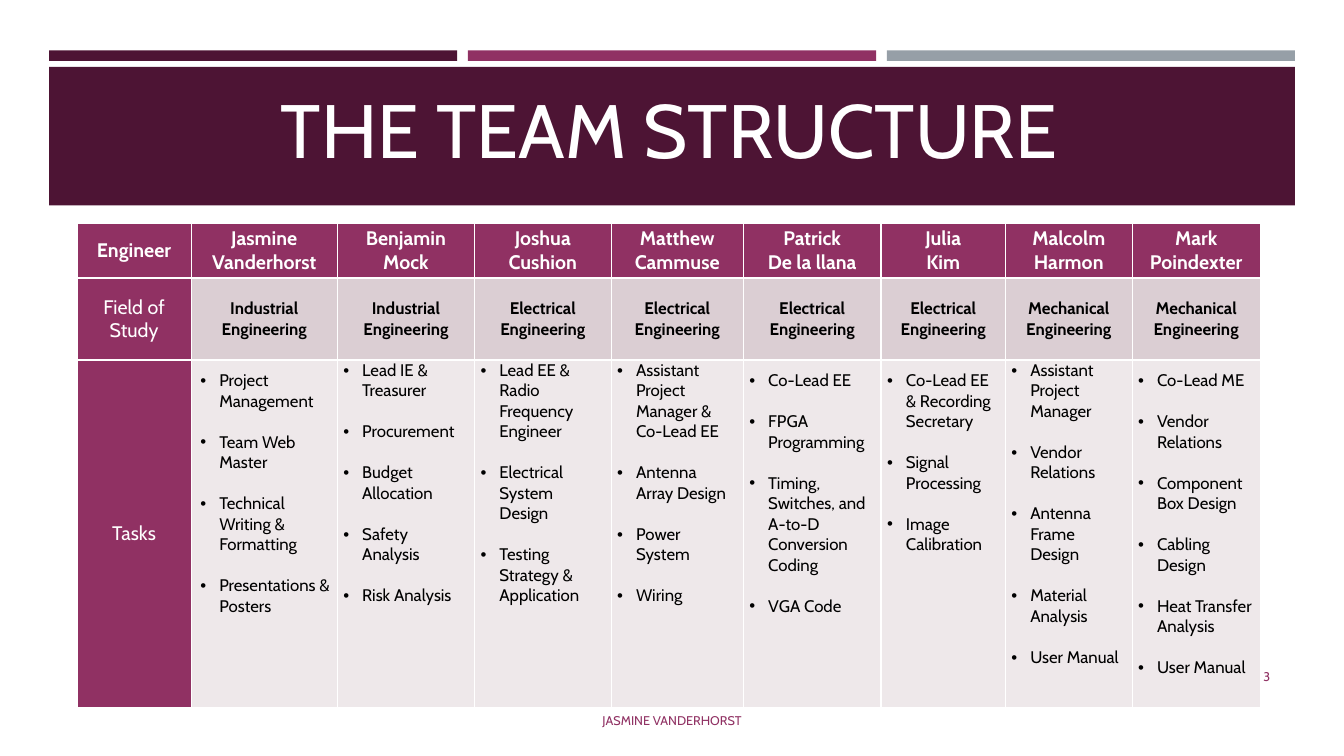
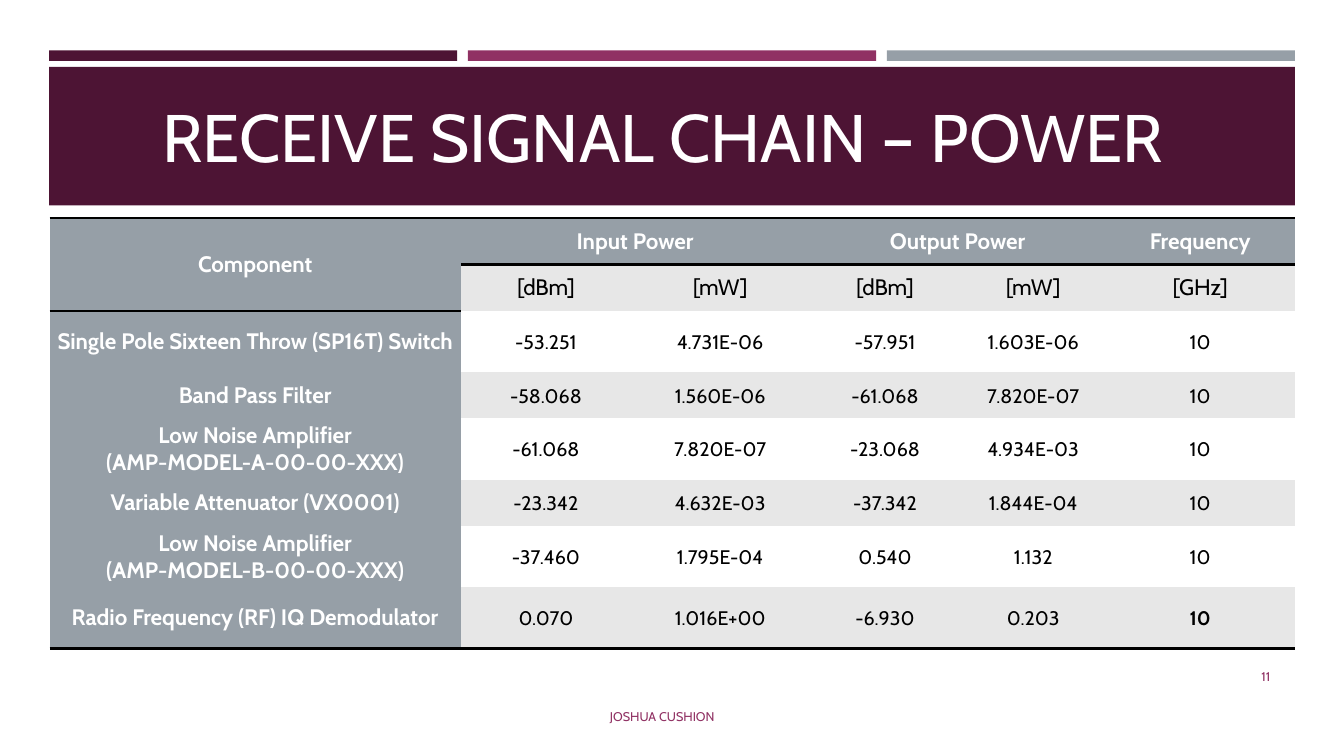
import pptx
import pptx.util
import pptx.dml.color
import pptx.enum.shapes
import pptx.enum.text
import pptx.oxml
import pptx.oxml.ns

Pt = pptx.util.Pt
ALIGN = pptx.enum.text.PP_ALIGN
ANCHOR = pptx.enum.text.MSO_ANCHOR
NO_GRID = "{2D5ABB26-0587-4C30-8999-92F81FD0307C}"


def assign(target, values):
    for name, value in values.items():
        setattr(target, name, value)


class Deck:
    FONT = "Cabin"
    COLORS = {
        "plum": "4D1434", "berry": "903163", "slate": "969FA7",
        "rose": "DBCED3", "blush": "EEE8EA", "mist": "E7E7E7",
        "white": "FFFFFF", "black": "000000",
    }
    LEFT, WIDTH = 35, 890
    BAND_WIDTH = 291.6

    def __init__(self):
        self.prs = pptx.Presentation()
        assign(self.prs, {"slide_width": Pt(960), "slide_height": Pt(540)})
        self.slide = None

    def color(self, name):
        return pptx.dml.color.RGBColor.from_string(self.COLORS[name])

    def paint(self, fill, name):
        fill.solid()
        fill.fore_color.rgb = self.color(name)

    def style(self, paragraph, size, color, bold=False, **layout):
        assign(paragraph, layout)
        assign(paragraph.font, {"name": self.FONT, "size": Pt(size), "bold": bold})
        paragraph.font.color.rgb = self.color(color)

    def bar(self, left, top, width, height, color):
        bar = self.slide.shapes.add_shape(
            pptx.enum.shapes.MSO_SHAPE.RECTANGLE, Pt(left), Pt(top), Pt(width), Pt(height))
        bar.shadow.inherit = False
        self.paint(bar.fill, color)
        bar.line.fill.background()

    def new_slide(self, title, size, box):
        self.slide = self.prs.slides.add_slide(self.prs.slide_layouts[5])
        pitch = (self.WIDTH - self.BAND_WIDTH) / 2
        for i, color in enumerate(("plum", "berry", "slate")):
            self.bar(self.LEFT + i * pitch, 36, self.BAND_WIDTH, 7.5, color)
        self.bar(self.LEFT, 47.8, self.WIDTH, 99, "plum")
        heading = self.slide.shapes.title
        heading.element.getparent().append(heading.element)
        assign(heading, dict(zip(("left", "top", "width", "height"), map(Pt, box))))
        frame = heading.text_frame
        frame.text = title
        assign(frame, {"vertical_anchor": ANCHOR.BOTTOM, "word_wrap": True,
                       "auto_size": pptx.enum.text.MSO_AUTO_SIZE.NONE})
        self.style(frame.paragraphs[0], size, "white", alignment=ALIGN.CENTER)

    def label(self, text, left, top, width, align):
        frame = self.slide.shapes.add_textbox(Pt(left), Pt(top), Pt(width), Pt(28.8)).text_frame
        frame.text = text
        assign(frame, {"word_wrap": True, "vertical_anchor": ANCHOR.MIDDLE})
        self.style(frame.paragraphs[0], 9, "berry", alignment=align)

    def footer(self, speaker, left, top, width, number):
        self.label(speaker, left, top, width, ALIGN.CENTER)
        self.label(number, 831.6, 468.7, 82.8, ALIGN.RIGHT)

    def table(self, left, top, widths, heights):
        frame = self.slide.shapes.add_table(
            len(heights), len(widths), Pt(left), Pt(top), Pt(sum(widths)), Pt(sum(heights)))
        table = frame.table
        assign(table, {"first_row": False, "horz_banding": False})
        table._tbl.tblPr.find(pptx.oxml.ns.qn("a:tableStyleId")).text = NO_GRID
        for column, width in zip(table.columns, widths):
            column.width = Pt(width)
        for row, height in zip(table.rows, heights):
            row.height = Pt(height)
        return table

    def edges(self, cell, color, weights):
        properties = cell._tc.get_or_add_tcPr()
        for side in "LRTB":
            if side in weights:
                properties.append(pptx.oxml.parse_xml(
                    f'<a:ln{side} {pptx.oxml.ns.nsdecls("a")} w="{Pt(weights[side])}">'
                    f'<a:solidFill><a:srgbClr val="{self.COLORS[color]}"/></a:solidFill>'
                    f'</a:ln{side}>'))

    def cell(self, cell, text, fill, size, color, inset, bold=False, **layout):
        cell.text = text
        self.paint(cell.fill, fill)
        assign(cell, {"vertical_anchor": ANCHOR.MIDDLE, "margin_left": Pt(inset),
                      "margin_right": Pt(inset), "margin_top": 0, "margin_bottom": 0})
        for paragraph in cell.text_frame.paragraphs:
            self.style(paragraph, size, color, bold, **{"alignment": ALIGN.CENTER, **layout})

    def bullets(self, cell, items, fill, inset, indent, top):
        self.cell(cell, "\n".join(items), fill, 12, "black", inset,
                  alignment=ALIGN.LEFT, space_after=Pt(14.64))
        assign(cell, {"vertical_anchor": ANCHOR.TOP, "margin_top": Pt(top)})
        for paragraph in cell.text_frame.paragraphs:
            properties = paragraph._p.get_or_add_pPr()
            properties.set("marL", str(Pt(indent)))
            properties.set("indent", str(-Pt(13.5)))
            for bullet in ('buFont {} typeface="Arial"', 'buChar {} char="•"'):
                properties.append(pptx.oxml.parse_xml(
                    "<a:" + bullet.format(pptx.oxml.ns.nsdecls("a")) + "/>"))


TEAM = [
    ("Jasmine Vanderhorst", "Industrial", 7.3,
     ["Project Management", "Team Web Master", "Technical Writing & Formatting",
      "Presentations & Posters"]),
    ("Benjamin Mock", "Industrial", 0,
     ["Lead IE & Treasurer", "Procurement", "Budget Allocation", "Safety Analysis",
      "Risk Analysis"]),
    ("Joshua Cushion", "Electrical", 0,
     ["Lead EE & Radio Frequency Engineer", "Electrical System Design",
      "Testing Strategy & Application"]),
    ("Matthew Cammuse", "Electrical", 0,
     ["Assistant Project Manager & Co-Lead EE", "Antenna Array Design", "Power System",
      "Wiring"]),
    ("Patrick\nDe la llana", "Electrical", 7.3,
     ["Co-Lead EE", "FPGA Programming", "Timing, Switches, and A-to-D Conversion Coding",
      "VGA Code"]),
    ("Julia\nKim", "Electrical", 7.3,
     ["Co-Lead EE & Recording Secretary", "Signal Processing", "Image Calibration"]),
    ("Malcolm Harmon", "Mechanical", 0,
     ["Assistant Project Manager", "Vendor Relations", "Antenna Frame Design",
      "Material Analysis", "User Manual"]),
    ("Mark Poindexter", "Mechanical", 7.3,
     ["Co-Lead ME", "Vendor Relations", "Component Box Design", "Cabling Design",
      "Heat Transfer Analysis", "User Manual"]),
]

CHAIN = [
    ("Single Pole Sixteen Throw (SP16T) Switch", "-53.251", "4.731E-06", "-57.951", "1.603E-06"),
    ("Band Pass Filter", "-58.068", "1.560E-06", "-61.068", "7.820E-07"),
    ("Low Noise Amplifier\n(AMP-MODEL-A-00-00-XXX)", "-61.068", "7.820E-07", "-23.068",
     "4.934E-03"),
    ("Variable Attenuator (VX0001)", "-23.342", "4.632E-03", "-37.342", "1.844E-04"),
    ("Low Noise Amplifier\n(AMP-MODEL-B-00-00-XXX)", "-37.460", "1.795E-04", "0.540", "1.132"),
    ("Radio Frequency (RF) IQ Demodulator", "0.070", "1.016E+00", "-6.930", "0.203"),
]


def team_slide(deck):
    deck.new_slide("THE TEAM STRUCTURE", 54, (44, 49.7, 868, 77.8))
    deck.footer("JASMINE VANDERHORST", 312, 500.4, 336, "3")
    team = deck.table(55, 159.4, [81.6, 104.4, 98, 97.6, 94.4, 98.4, 88.8, 90.6, 91.4],
                      [39.2, 58.6, 248.4])
    inset = 4.3
    for r, row in enumerate(team.rows):
        for cell in row.cells:
            deck.edges(cell, "white", {"L": 1, "R": 1, "T": 1.5 if r == 1 else 1,
                                       "B": 1.5 if r == 0 else 1})
    for r, heading in enumerate(("Engineer", "Field of Study", "Tasks")):
        deck.cell(team.cell(r, 0), heading, "berry", 14, "white", inset, bold=r == 0)
    for c, (engineer, field, top, tasks) in enumerate(TEAM, 1):
        deck.cell(team.cell(0, c), engineer, "berry", 14, "white", inset, bold=True)
        deck.cell(team.cell(1, c), field + " Engineering", "rose", 12, "black", inset, bold=True)
        deck.bullets(team.cell(2, c), tasks, "blush", inset, 15.8 if c == 1 else 13.5, top)


def power_slide(deck):
    deck.new_slide("RECEIVE SIGNAL CHAIN – POWER", 48, (94.3, 22.3, 758.2, 107.3))
    power = deck.table(35.4, 155.8, [293.8, 121.6, 127.4, 108, 103.8, 134.8],
                       [33.1, 33.1, 43.8, 33.1, 43.8, 33.1, 43.8, 43.8])
    inset = 5
    power.cell(0, 0).merge(power.cell(1, 0))
    for c in (1, 3):
        power.cell(0, c).merge(power.cell(0, c + 1))
    for c in range(6):
        deck.edges(power.cell(0, c), "black", {"T": 2, "B": 2})
        deck.edges(power.cell(7, c), "black", {"B": 2})
    for c, heading in ((0, "Component"), (1, "Input Power"), (3, "Output Power"),
                       (5, "Frequency")):
        deck.cell(power.cell(0, c), heading, "slate", 16, "white", inset, bold=True)
    for c, unit in enumerate(("[dBm]", "[mW]", "[dBm]", "[mW]", "[GHz]"), 1):
        deck.cell(power.cell(1, c), unit, "mist", 16, "black", inset)
    for r, (component, *levels) in enumerate(CHAIN, 2):
        deck.cell(power.cell(r, 0), component, "slate", 16, "white", inset, bold=True)
        for c, value in enumerate(levels + ["10"], 1):
            deck.cell(power.cell(r, c), value, "mist" if r % 2 else "white", 14, "black", inset,
                      bold=(r, c) == (7, 5), line_spacing=1.07)
    deck.footer("JOSHUA CUSHION", 201, 497.5, 544, "11")


def main():
    deck = Deck()
    team_slide(deck)
    power_slide(deck)
    deck.prs.save("out.pptx")


if __name__ == "__main__":
    main()
